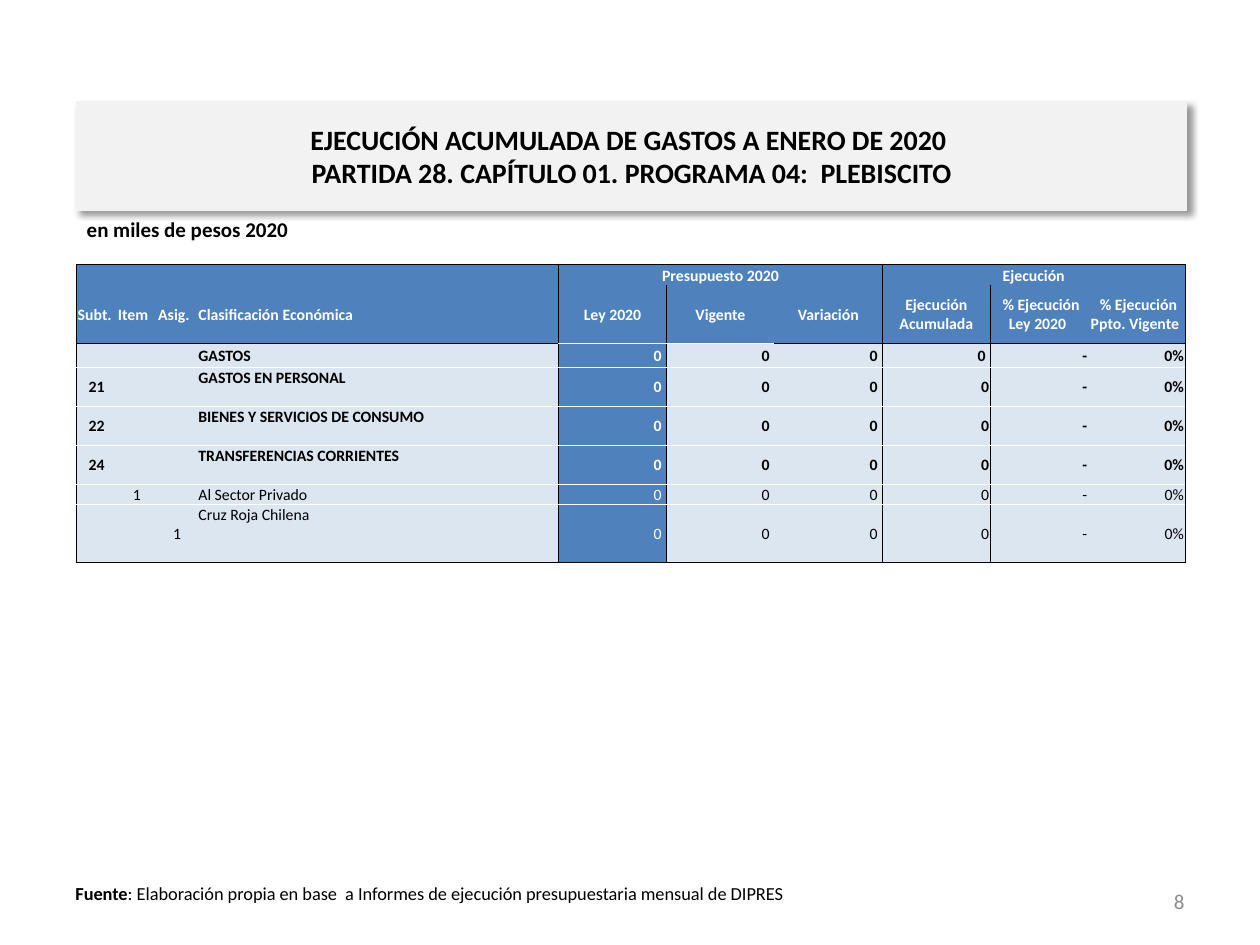
from lxml.etree import SubElement
from pptx import Presentation
from pptx.dml.color import RGBColor
from pptx.enum.text import MSO_ANCHOR as ANCHOR, MSO_AUTO_SIZE as AUTO, PP_ALIGN as ALIGN
from pptx.oxml import parse_xml
from pptx.oxml.ns import nsdecls, qn
from pptx.util import Pt

TITLE = ("EJECUCIÓN ACUMULADA DE GASTOS A ENERO DE 2020 \v"
         "PARTIDA 28. CAPÍTULO 01. PROGRAMA 04:  PLEBISCITO")
UNITS = "en miles de pesos 2020"
SOURCE = ("Fuente", ": Elaboración propia en base  a Informes de ejecución "
          "presupuestaria mensual de DIPRES")
PAGE = "8"

GROUPS = {4: "Presupuesto 2020", 7: "Ejecución"}  # first column: heading
HEADINGS = ["Subt.", "Item", "Asig.", "Clasificación Económica", "Ley 2020", "Vigente",
            "Variación", "Ejecución Acumulada", " % Ejecución Ley 2020 ",
            " % Ejecución Ppto. Vigente "]
ITEMS = [  # subtítulo, ítem, asignación, clasificación
    ("", "", "", "GASTOS"),
    ("21", "", "", "GASTOS EN PERSONAL"),
    ("22", "", "", "BIENES Y SERVICIOS DE CONSUMO"),
    ("24", "", "", "TRANSFERENCIAS CORRIENTES"),
    ("", "1", "", "Al Sector Privado"),
    ("", "", "1", "Cruz Roja Chilena"),
]
BUDGET = ("0 ", "0 ", "0 ")
RATES = ("-", "0%")
COL_WIDTHS = [23] * 3 + [206.5] + [61.7] * 4 + [56, 55.3]
ROW_HEIGHTS = [12, 33, 14, 22.3, 22.3, 22.3, 11.1, 33.2]
BOLD_ROWS = 6  # two heading rows and four totals

BLACK, WHITE, BLUE, PALE = "000000", "FFFFFF", "4F81BD", "DCE6F1"


def rgb(value):
    return RGBColor.from_string(value)


def style(p, size, color=BLACK, bold=False, align=None):
    p.alignment = align
    f = p.font
    f.name, f.size, f.bold = "Calibri", Pt(size), bold
    f.color.rgb = rgb(color)


def add_text(s, text, left, top, width, height, anchor=ANCHOR.TOP):
    tf = s.shapes.add_textbox(Pt(left), Pt(top), Pt(width), Pt(height)).text_frame
    tf.word_wrap = True
    tf.vertical_anchor = anchor
    tf.text = text
    return tf.paragraphs[0]


def add_title(s):
    sp = s.shapes.title
    sp.left, sp.top, sp.width, sp.height = Pt(43.7), Pt(58.3), Pt(634.5), Pt(61.7)
    sp.fill.solid()
    sp.fill.fore_color.rgb = sp.line.color.rgb = rgb("F2F2F2")
    sp.line.width = Pt(0.75)
    sp._element.spPr.append(parse_xml(
        f'<a:effectLst {nsdecls("a")}><a:outerShdw blurRad="{Pt(4)}" dist="{Pt(3)}" '
        'dir="2700000" algn="tl" rotWithShape="0"><a:srgbClr val="000000">'
        '<a:alpha val="40000"/></a:srgbClr></a:outerShdw></a:effectLst>'))
    tf = sp.text_frame
    tf.auto_size = AUTO.NONE
    tf.vertical_anchor = ANCHOR.MIDDLE
    tf.text = TITLE
    style(tf.paragraphs[0], 16, bold=True, align=ALIGN.CENTER)


def set_borders(cell, row, col):
    """Black round each group of columns and the heading, white between items."""
    end = col + (cell.span_width if cell.is_merge_origin else 1)
    last = len(ROW_HEIGHTS) - 1
    under_heading = WHITE if col in (4, 5) else BLACK
    above = {0: BLACK, 1: None, 2: under_heading}.get(row, WHITE)
    below = {0: None, 1: under_heading, last: BLACK}.get(row, WHITE)
    sides = {"L": BLACK if col in (0, 4, 7) else None,
             "R": BLACK if end in (4, 7, 10) else None, "T": above, "B": below}
    tc_pr = cell._tc.get_or_add_tcPr()
    for side, color in sides.items():
        if color:
            ln = SubElement(tc_pr, qn(f"a:ln{side}"), w=str(Pt(0.5)))
            fill = SubElement(ln, qn("a:solidFill"))
            SubElement(fill, qn("a:srgbClr"), val=color)


def alignment(row, col):
    if row < 2:
        return ALIGN.CENTER if col > 3 else ALIGN.LEFT
    if col == 3:
        return ALIGN.JUSTIFY
    return ALIGN.CENTER if col < 3 else ALIGN.RIGHT


def fill_cell(cell, text, row, col):
    set_borders(cell, row, col)
    blue = row < 2 or col == 4
    cell.fill.solid()
    cell.fill.fore_color.rgb = rgb(BLUE if blue else PALE)
    cell.margin_left = cell.margin_right = cell.margin_top = Pt(0.72)
    cell.margin_bottom = 0
    if row == 0:
        cell.vertical_anchor = ANCHOR.BOTTOM
    else:
        cell.vertical_anchor = ANCHOR.TOP if col == 3 and row > 2 else ANCHOR.MIDDLE
    cell.text = text
    p = cell.text_frame.paragraphs[0]
    style(p, 9, WHITE if blue else BLACK, row < BOLD_ROWS, alignment(row, col))
    if not text:  # keeps an empty cell from stretching its row
        p._p.get_or_add_endParaRPr().set("sz", "900")


def add_budget_table(s):
    rows = [[GROUPS.get(c, "") for c in range(len(HEADINGS))], HEADINGS]
    for i, item in enumerate(ITEMS):
        rows.append([*item, *BUDGET, "0" if i else "0 ", *RATES])
    frame = s.shapes.add_table(len(rows), len(HEADINGS), Pt(43.7), Pt(151),
                               Pt(sum(COL_WIDTHS)), Pt(sum(ROW_HEIGHTS)))
    table = frame.table
    table.first_row = table.horz_banding = False
    style_id = table._tbl.tblPr.find(qn("a:tableStyleId"))
    style_id.text = "{2D5ABB26-0587-4C30-8999-92F81FD0307C}"  # no style, no grid
    for column, width in zip(table.columns, COL_WIDTHS):
        column.width = Pt(width)
    for line, height in zip(table.rows, ROW_HEIGHTS):
        line.height = Pt(height)
    for c in GROUPS:
        table.cell(0, c).merge(table.cell(0, c + 2))
    for r, texts in enumerate(rows):
        for c, text in enumerate(texts):
            fill_cell(table.cell(r, c), text, r, c)


def main():
    prs = Presentation()
    prs.slide_width, prs.slide_height = Pt(720), Pt(540)
    s = prs.slides.add_slide(prs.slide_layouts[5])
    p = add_text(s, SOURCE[0], 36, 500.4, 425.5, 20)
    p.add_run().text = SOURCE[1]
    style(p, 10.5)
    p.runs[0].font.bold = True
    add_title(s)
    p = add_text(s, PAGE, 516, 500.4, 168, 28.8, ANCHOR.MIDDLE)
    style(p, 12, "8C8C8C", align=ALIGN.RIGHT)
    p = add_text(s, UNITS, 42.5, 120.2, 634.5, 29.5)
    style(p, 12, bold=True)
    add_budget_table(s)
    prs.save("out.pptx")


if __name__ == "__main__":
    main()
